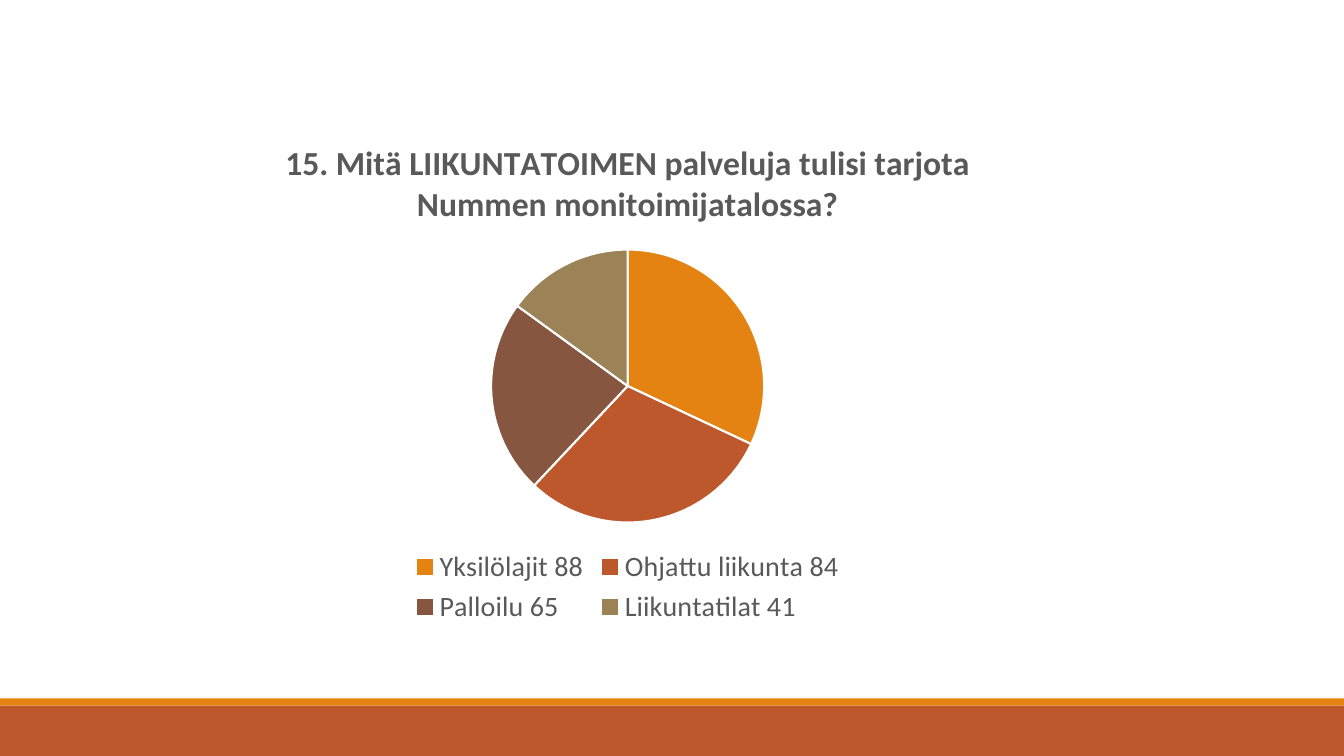
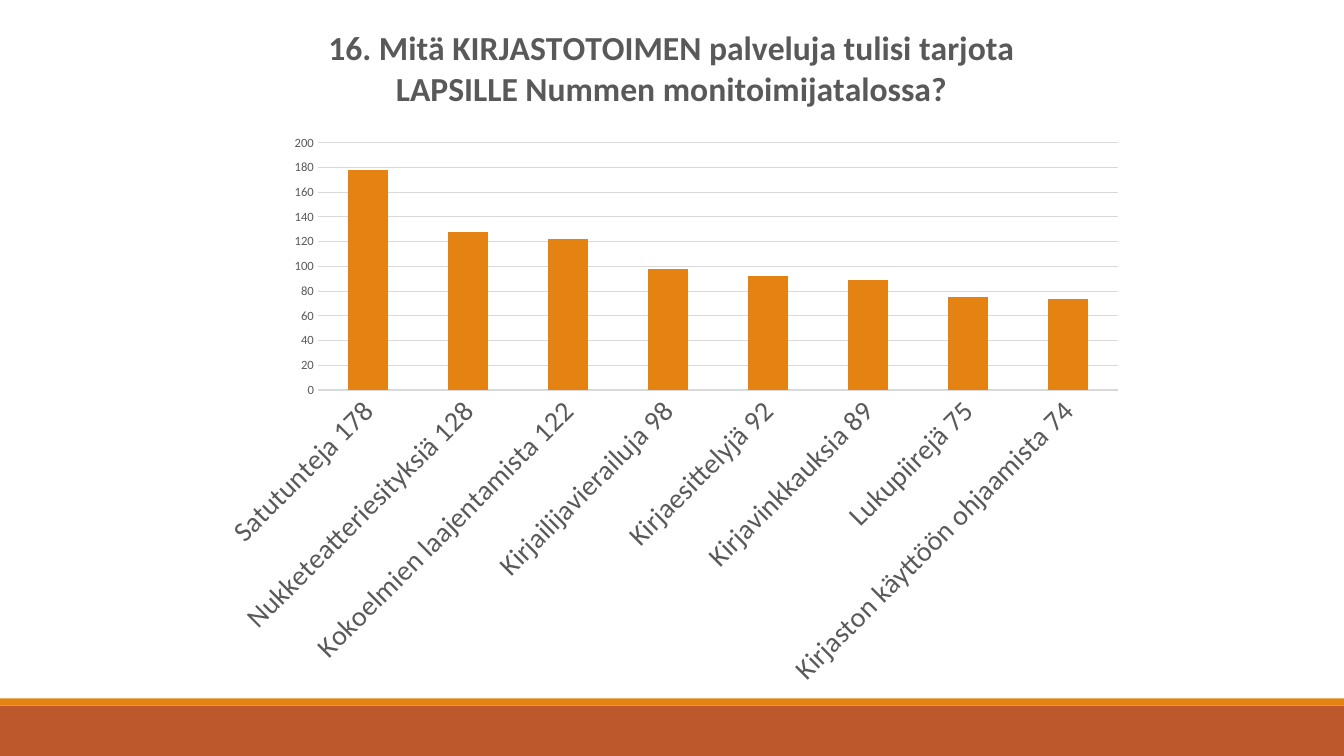
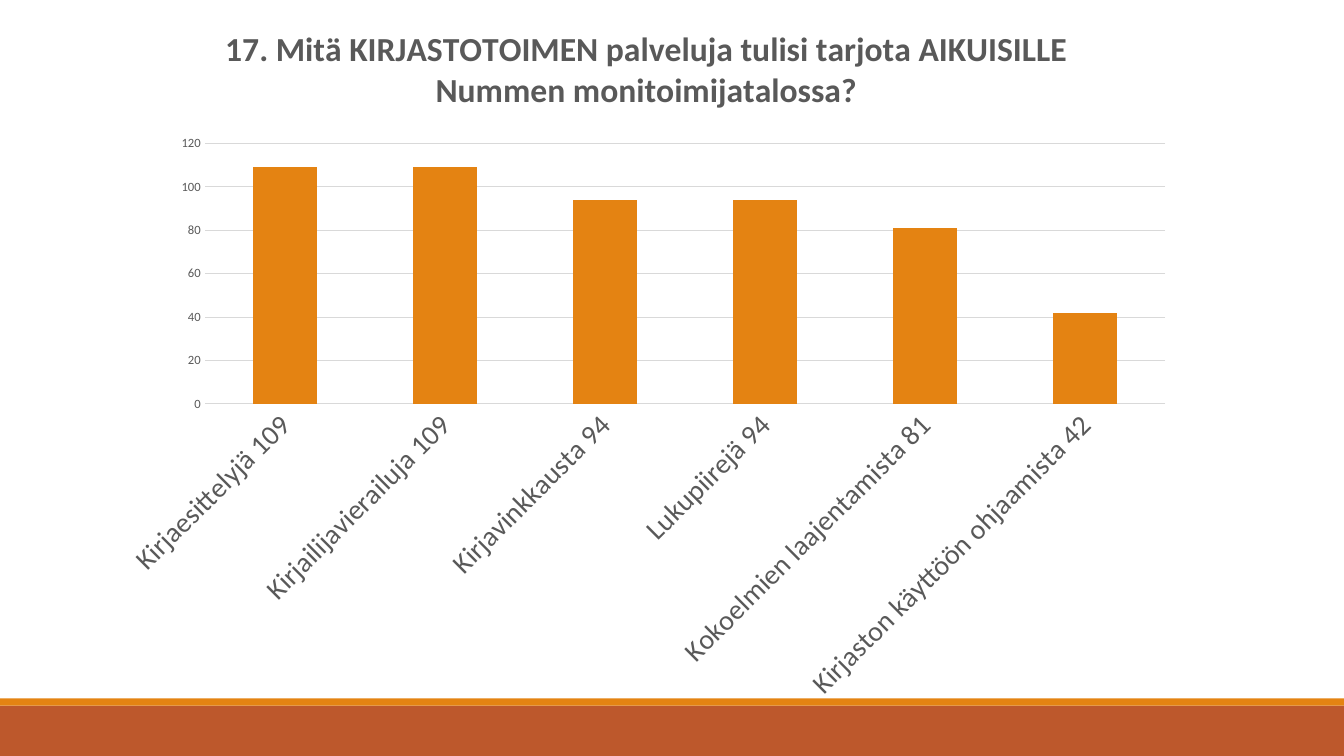
from dataclasses import dataclass

from pptx import Presentation
from pptx.chart.data import CategoryChartData
from pptx.dml.color import RGBColor as RGB
from pptx.enum.chart import XL_CHART_TYPE as CT, XL_LEGEND_POSITION as LP, XL_TICK_MARK as TM
from pptx.enum.shapes import MSO_SHAPE as SHP
from pptx.oxml.ns import qn
from pptx.util import Inches, Pt


@dataclass(frozen=True)
class Theme:
    font: str = "Calibri"
    text: str = "595959"
    grid: str = "D9D9D9"
    white: str = "FFFFFF"
    accents: tuple = ("E48312", "BD582C", "865640", "9B8357")
    title_pt: int = 24
    label_pt: int = 20
    tick_pt: int = 9
    base_pt: int = 10


class Deck:
    def __init__(self, theme):
        self.th = theme
        self.prs = Presentation()
        self.prs.slide_width, self.prs.slide_height = Inches(13.33), Inches(7.5)
        self.s = None

    # Slide with the two footer bands
    def slide(self):
        self.s = self.prs.slides.add_slide(self.prs.slide_layouts[6])
        self.band(7, 0.5, self.th.accents[1])
        self.band(6.93, 0.07, self.th.accents[0])

    def band(self, top, height, color):
        sp = self.s.shapes.add_shape(SHP.RECTANGLE, 0, Inches(top),
                                     self.prs.slide_width, Inches(height))
        sp.shadow.inherit = False
        self.fill(sp.fill, color)
        sp.line.fill.background()

    def fill(self, fill, color):
        fill.solid()
        fill.fore_color.rgb = RGB.from_string(color)

    def style(self, font, size, bold=False):
        font.name, font.size, font.bold = self.th.font, Pt(size), bold
        font.color.rgb = RGB.from_string(self.th.text)

    # Titled chart with one series
    def chart(self, kind, box, title, cats, vals):
        data = CategoryChartData()
        data.categories = cats
        data.add_series("Series 1", vals)
        ch = self.s.shapes.add_chart(kind, *map(Inches, box), data).chart
        self.style(ch.font, self.th.base_pt)
        ch.has_title = True
        ch.chart_title.include_in_layout = False
        r = ch.chart_title.text_frame.paragraphs[0].add_run()
        r.text = title
        self.style(r.font, self.th.title_pt, True)
        return ch

    def pie(self, box, title, cats, vals):
        ch = self.chart(CT.PIE, box, title, cats, vals)
        ch.plots[0].vary_by_categories = True
        for i, color in enumerate(self.th.accents):
            fmt = ch.plots[0].series[0].points[i].format
            self.fill(fmt.fill, color)
            fmt.line.width = Pt(1.5)
            fmt.line.color.rgb = RGB.from_string(self.th.white)
        ch.has_legend = True
        ch.legend.position = LP.BOTTOM
        ch.legend.include_in_layout = False
        self.style(ch.legend.font, self.th.label_pt)

    def columns(self, box, title, cats, vals, top):
        ch = self.chart(CT.COLUMN_CLUSTERED, box, title, cats, vals)
        ch.has_legend = False
        plot = ch.plots[0]
        plot.gap_width, plot.vary_by_categories = 150, False
        self.fill(plot.series[0].format.fill, self.th.accents[0])
        cat, val = ch.category_axis, ch.value_axis
        for axis, size in ((cat, self.th.label_pt), (val, self.th.tick_pt)):
            axis.major_tick_mark = axis.minor_tick_mark = TM.NONE
            axis.format.line.fill.background()
            self.style(axis.tick_labels.font, size)
        # Category labels slant upwards by 45 degrees
        body = cat._element.find(qn("c:txPr")).find(qn("a:bodyPr"))
        body.set("rot", "-2700000")
        body.set("vert", "horz")
        val.minimum_scale, val.maximum_scale, val.major_unit = 0, top, 20
        line = val.major_gridlines.format.line
        line.width = Pt(0.75)
        line.color.rgb = RGB.from_string(self.th.grid)


def main():
    deck = Deck(Theme())

    # Sports services
    deck.slide()
    deck.pie((1.34, 1.17, 9.77, 5.08),
             "15. Mitä LIIKUNTATOIMEN palveluja tulisi tarjota Nummen monitoimijatalossa?",
             ["Yksilölajit 88", "Ohjattu liikunta 84", "Palloilu 65", "Liikuntatilat 41"],
             [32, 30, 23, 15])

    # Library services: each label ends with its count
    surveys = [
        ((2.05, 0, 9.22, 6.95), 200,
         "16. Mitä KIRJASTOTOIMEN palveluja tulisi tarjota LAPSILLE Nummen monitoimijatalossa?",
         [("Satutunteja", 178), ("Nukketeatteriesityksiä", 128),
          ("Kokoelmien laajentamista", 122), ("Kirjailijavierailuja", 98),
          ("Kirjaesittelyjä", 92), ("Kirjavinkkauksia", 89), ("Lukupiirejä", 75),
          ("Kirjaston käyttöön ohjaamista", 74)]),
        ((1.05, 0, 10.72, 7.09), 120,
         "17. Mitä KIRJASTOTOIMEN palveluja tulisi tarjota AIKUISILLE Nummen monitoimijatalossa?",
         [("Kirjaesittelyjä", 109), ("Kirjailijavierailuja", 109),
          ("Kirjavinkkausta", 94), ("Lukupiirejä", 94),
          ("Kokoelmien laajentamista", 81), ("Kirjaston käyttöön ohjaamista", 42)]),
    ]
    for box, top, title, answers in surveys:
        deck.slide()
        deck.columns(box, title, [f"{name} {n}" for name, n in answers],
                     [n for _, n in answers], top)

    deck.prs.save("out.pptx")


if __name__ == "__main__":
    main()
